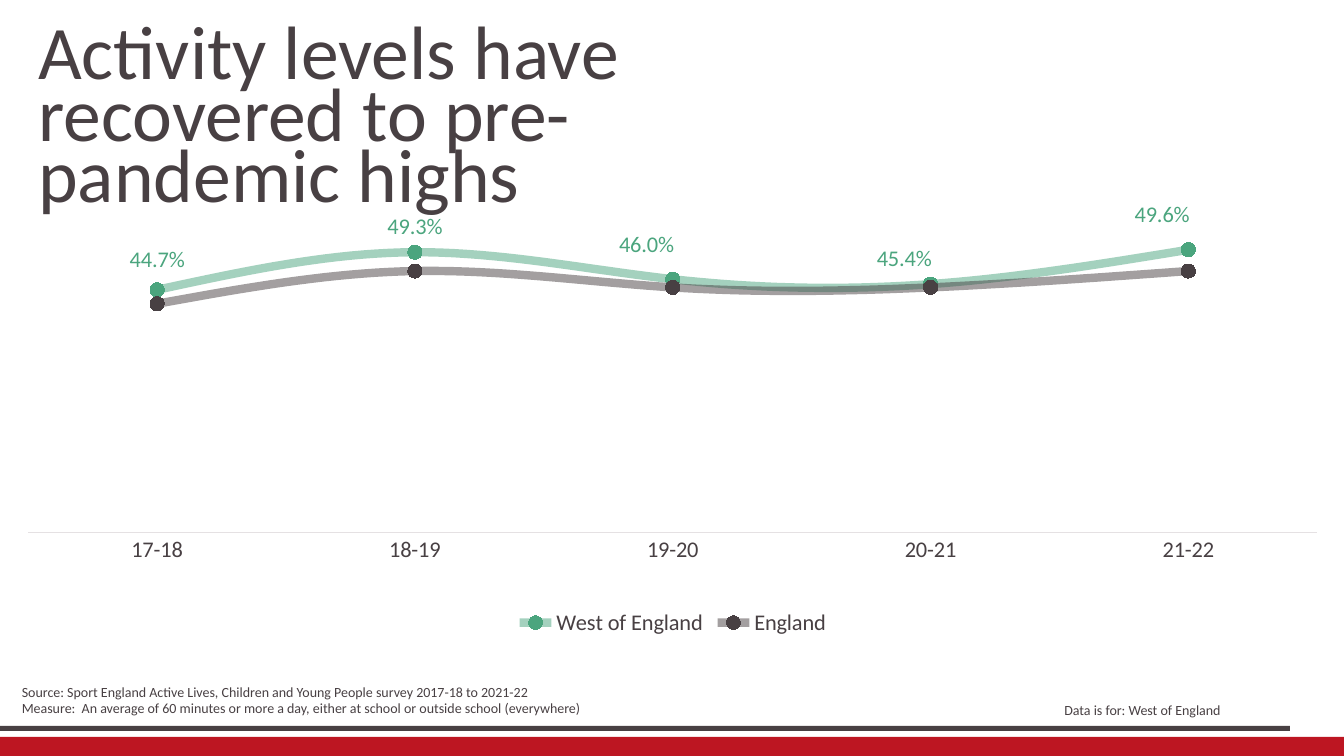
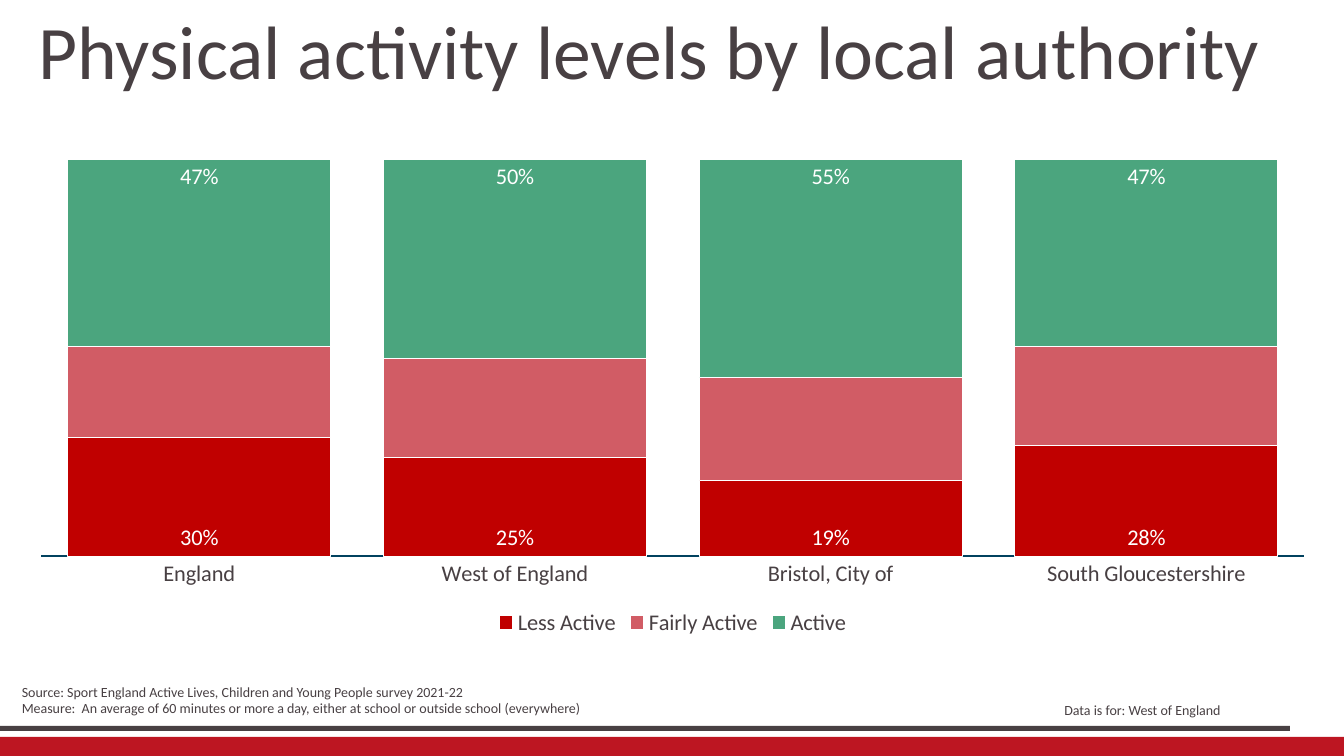
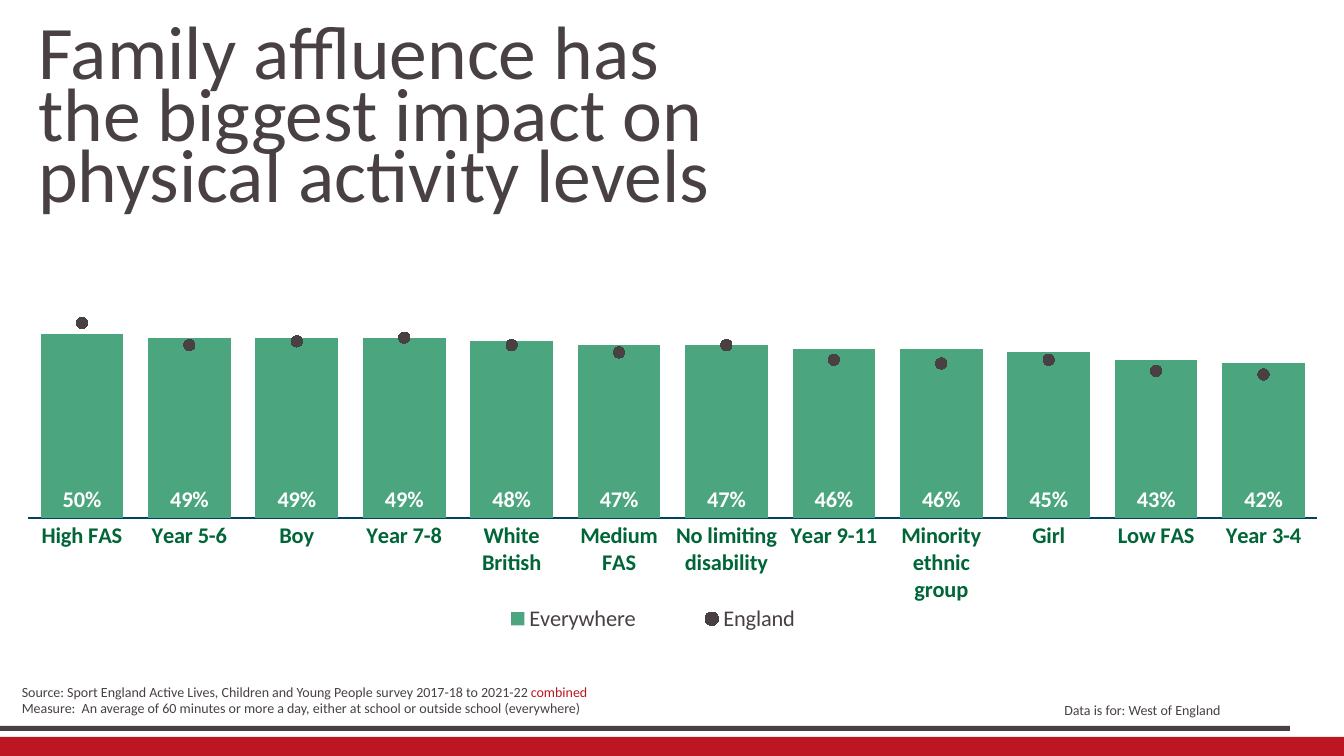
from dataclasses import dataclass

from pptx import Presentation
from pptx.chart.data import CategoryChartData
from pptx.dml.color import RGBColor
from pptx.enum.chart import XL_CHART_TYPE as ChartType
from pptx.enum.chart import XL_LABEL_POSITION as LabelPosition
from pptx.enum.chart import XL_LEGEND_POSITION as LegendPosition
from pptx.enum.chart import XL_MARKER_STYLE as MarkerStyle
from pptx.enum.chart import XL_TICK_MARK as TickMark
from pptx.enum.shapes import MSO_SHAPE as Preset
from pptx.enum.text import MSO_ANCHOR as Anchor
from pptx.enum.text import MSO_AUTO_SIZE as AutoSize
from pptx.enum.text import PP_ALIGN as Align
from pptx.oxml import parse_xml
from pptx.oxml.ns import nsdecls, qn
from pptx.util import Cm, Pt


@dataclass(frozen=True)
class Theme:
    font: str = "Calibri"
    title_size: int = 54
    title_leading: int = 44
    chart_size: int = 16
    note_size: int = 10
    ink: str = "484043"
    red: str = "BD1622"
    deep_red: str = "C00000"
    rose: str = "D15C65"
    green: str = "4BA57E"
    dark_green: str = "006537"
    navy: str = "01425F"
    pale: str = "E5E1E3"
    white: str = "FFFFFF"


THEME = Theme()
MEASURE = ("Measure:  An average of 60 minutes or more a day, "
           "either at school or outside school (everywhere)")
SURVEY = "Source: Sport England Active Lives, Children and Young People survey "


def style_font(font, size, color=THEME.ink, bold=False):
    font.name = THEME.font
    font.size = Pt(size)
    font.bold = bold
    font.color.rgb = RGBColor.from_string(color)


def paint(fill, color):
    fill.solid()
    fill.fore_color.rgb = RGBColor.from_string(color)


def add_layout_band(slide, top, width, height, color):
    band = slide.shapes.add_shape(Preset.RECTANGLE, 0, Cm(top), Cm(width), Cm(height))
    band.shadow.inherit = False
    band.line.fill.background()
    paint(band.fill, color)
    slide.slide_layout.element.cSld.spTree.append(band.element)


def add_title(slide, text, width):
    title = slide.shapes.title
    title.left, title.top, title.width, title.height = Cm(0.71), Cm(0.71), Cm(width), Cm(4)
    frame = title.text_frame
    frame.text = text
    frame.word_wrap = True
    frame.auto_size = AutoSize.NONE
    frame.vertical_anchor = Anchor.TOP
    para = frame.paragraphs[0]
    para.alignment = Align.LEFT
    para.line_spacing = Pt(THEME.title_leading)
    style_font(para.font, THEME.title_size)


def add_note(slide, lines, left, top, width, align=Align.LEFT):
    height = 0.24 + 0.43 * len(lines)
    frame = slide.shapes.add_textbox(Cm(left), Cm(top), Cm(width), Cm(height)).text_frame
    frame.word_wrap = True
    for index, line in enumerate(lines):
        para = frame.add_paragraph() if index else frame.paragraphs[0]
        para.alignment = align
        style_font(para.font, THEME.note_size)
        para.add_run().text = line
    return frame


def add_notes(slide, years, highlight=""):
    frame = add_note(slide, [SURVEY + years, MEASURE], 0.3, 17.09, 15.6)
    if highlight:
        span = frame.paragraphs[0].add_run()
        span.text = highlight
        span.font.color.rgb = RGBColor.from_string(THEME.red)
    add_note(slide, ["Data is for: West of England"], 19.86, 17.55, 11.15, Align.RIGHT)


def manual_layout(x, y, w=None, h=None, inner=False):
    target = '<c:layoutTarget val="inner"/>' if inner else ""
    modes = "" if w is None else '<c:xMode val="edge"/><c:yMode val="edge"/>'
    places = "".join(f'<c:{name} val="{value}"/>'
                     for name, value in zip("xywh", (x, y, w, h)) if value is not None)
    return parse_xml(f'<c:layout {nsdecls("c")}><c:manualLayout>{target}{modes}{places}'
                     '</c:manualLayout></c:layout>')


def place_plot(chart, *box):
    area = chart.element.find(".//" + qn("c:plotArea"))
    for old in area.findall(qn("c:layout")):
        area.remove(old)
    area.insert(0, manual_layout(*box, inner=True))


def add_chart(slide, kind, categories, series, number_format, axis_line,
              low=0, high=1, label_color=THEME.ink, bold=False):
    data = CategoryChartData(number_format=number_format)
    data.categories = categories
    for name, values in series.items():
        data.add_series(name, values)
    chart = slide.shapes.add_chart(kind, Cm(0.38), Cm(3.78), Cm(33.15), Cm(12.37), data).chart
    style_font(chart.font, THEME.chart_size)
    chart.has_title = False
    chart.has_legend = True
    chart.legend.position = LegendPosition.BOTTOM
    chart.legend.include_in_layout = False
    style_font(chart.legend.font, THEME.chart_size)
    value_axis, category_axis = chart.value_axis, chart.category_axis
    value_axis.visible = False
    value_axis.has_major_gridlines = False
    value_axis.minimum_scale, value_axis.maximum_scale = low, high
    category_axis.major_tick_mark = category_axis.minor_tick_mark = TickMark.NONE
    style_font(category_axis.tick_labels.font, THEME.chart_size, label_color, bold)
    color, weight = axis_line
    category_axis.format.line.color.rgb = RGBColor.from_string(color)
    category_axis.format.line.width = Pt(weight)
    chart.plots[0].vary_by_categories = False
    return chart


def add_labels(series, number_format, position, color=THEME.white, bold=False):
    labels = series.data_labels
    labels.show_value = True
    labels.number_format = number_format
    labels.number_format_is_linked = False
    labels.position = position
    style_font(labels.font, THEME.chart_size, color, bold)


def shift_label(series, index, x, y):
    label = series.points[index].data_label
    style_font(label.font, THEME.chart_size, THEME.green)
    label.position = LabelPosition.ABOVE
    label_xml = series.data_labels._element.findall(qn("c:dLbl"))[index]
    label_xml.find(qn("c:idx")).addnext(manual_layout(x, y))


def set_marker(series, size, color):
    series.marker.style = MarkerStyle.CIRCLE
    series.marker.size = size
    paint(series.marker.format.fill, color)
    series.marker.format.line.fill.background()


def set_soft_line(series, color):
    series.smooth = True
    line = series.format.line
    line.width = Pt(6)
    line.color.rgb = RGBColor.from_string(color)
    line_xml = series._element.find(qn("c:spPr")).find(qn("a:ln"))
    line_xml.find(".//" + qn("a:srgbClr")).append(
        parse_xml(f'<a:alpha {nsdecls("a")} val="50000"/>'))
    set_marker(series, 10, color)


def move_last_series_to_line(chart):
    bars = chart.element.find(".//" + qn("c:barChart"))
    lines = parse_xml(f'<c:lineChart {nsdecls("c")}><c:grouping val="standard"/>'
                      '<c:varyColors val="0"/><c:marker val="1"/></c:lineChart>')
    series = bars.findall(qn("c:ser"))[-1]
    for flag in series.findall(qn("c:invertIfNegative")):
        series.remove(flag)
    lines.insert(2, series)
    for axis in bars.findall(qn("c:axId")):
        lines.append(parse_xml(f'<c:axId {nsdecls("c")} val="{axis.get("val")}"/>'))
    bars.addnext(lines)
    return chart.plots[1].series[0]


def build_trend(slide):
    add_title(slide, "Activity levels have recovered to pre-pandemic highs", 16.66)
    add_notes(slide, "2017-18 to 2021-22")
    chart = add_chart(
        slide, ChartType.LINE_MARKERS, ["17-18", "18-19", "19-20", "20-21", "21-22"],
        {"West of England": [0.447, 0.493, 0.46, 0.454, 0.496],
         "England": [0.43, 0.47, 0.45, 0.45, 0.47]},
        "0.0%", (THEME.pale, 0.75), low=0.15, high=0.6)
    place_plot(chart, 0.01, 0.03, 0.98, 0.75)
    west, england = chart.plots[0].series
    set_soft_line(west, THEME.green)
    set_soft_line(england, THEME.ink)
    add_labels(west, "0.0%", LabelPosition.ABOVE, THEME.green)
    offsets = [(0, -0.01), (0, 0), (-0.02, -0.02), (-0.02, 0), (-0.02, -0.02)]
    for index, offset in enumerate(offsets):
        shift_label(west, index, *offset)


def build_authorities(slide):
    add_title(slide, "Physical activity levels by local authority", 33.15)
    add_notes(slide, "2021-22")
    chart = add_chart(
        slide, ChartType.COLUMN_STACKED,
        ["England", "West of England", "Bristol, City of", "South Gloucestershire"],
        {"Less Active": [0.3, 0.25, 0.19, 0.28],
         "Fairly Active": [0.23, 0.25, 0.26, 0.25],
         "Active": [0.47, 0.5, 0.55, 0.47]},
        "0%", (THEME.navy, 1.5))
    plot = chart.plots[0]
    plot.gap_width, plot.overlap = 20, 100
    for series, color in zip(plot.series, (THEME.deep_red, THEME.rose, THEME.green)):
        paint(series.format.fill, color)
        series.format.line.color.rgb = RGBColor.from_string(THEME.white)
        series.format.line.width = Pt(0.5)
    add_labels(plot.series[0], "0%", LabelPosition.INSIDE_BASE)
    add_labels(plot.series[2], "0%", LabelPosition.INSIDE_END)


def build_affluence(slide):
    add_title(slide, "Family affluence has the biggest impact on physical activity levels", 19)
    add_notes(slide, "2017-18 to 2021-22 ", "combined")
    chart = add_chart(
        slide, ChartType.COLUMN_CLUSTERED,
        ["High FAS", "Year 5-6", "Boy", "Year 7-8", "White British", "Medium FAS",
         "No limiting disability", "Year 9-11", "Minority ethnic group", "Girl",
         "Low FAS", "Year 3-4"],
        {"Everywhere": [0.5, 0.49, 0.49, 0.49, 0.48, 0.47, 0.47, 0.46, 0.46, 0.45, 0.43, 0.42],
         "England": [0.53, 0.47, 0.48, 0.49, 0.47, 0.45, 0.47, 0.43, 0.42, 0.43, 0.4, 0.39]},
        "0%", (THEME.navy, 1.5), label_color=THEME.dark_green, bold=True)
    chart.value_axis.major_unit = 0.2
    place_plot(chart, 0.01, 0, 0.98, 0.75)
    legend_position = chart.legend._element.find(qn("c:legendPos"))
    legend_position.addnext(manual_layout(0.33, 0.92, 0.31, 0.07))
    plot = chart.plots[0]
    plot.gap_width, plot.overlap = 30, 100
    everywhere = plot.series[0]
    paint(everywhere.format.fill, THEME.green)
    add_labels(everywhere, "0%", LabelPosition.INSIDE_BASE, bold=True)
    england = move_last_series_to_line(chart)
    england.smooth = False
    england.format.line.fill.background()
    set_marker(england, 8, THEME.ink)


def main():
    deck = Presentation()
    deck.slide_width, deck.slide_height = Cm(33.87), Cm(19.05)
    title_only = deck.slide_layouts[5]
    pages = [deck.slides.add_slide(title_only) for _ in range(3)]
    add_layout_band(pages[0], 18.57, 33.87, 0.48, THEME.red)
    add_layout_band(pages[0], 18.29, 32.51, 0.13, THEME.ink)
    for build, page in zip((build_trend, build_authorities, build_affluence), pages):
        build(page)
    deck.save("out.pptx")


if __name__ == "__main__":
    main()
